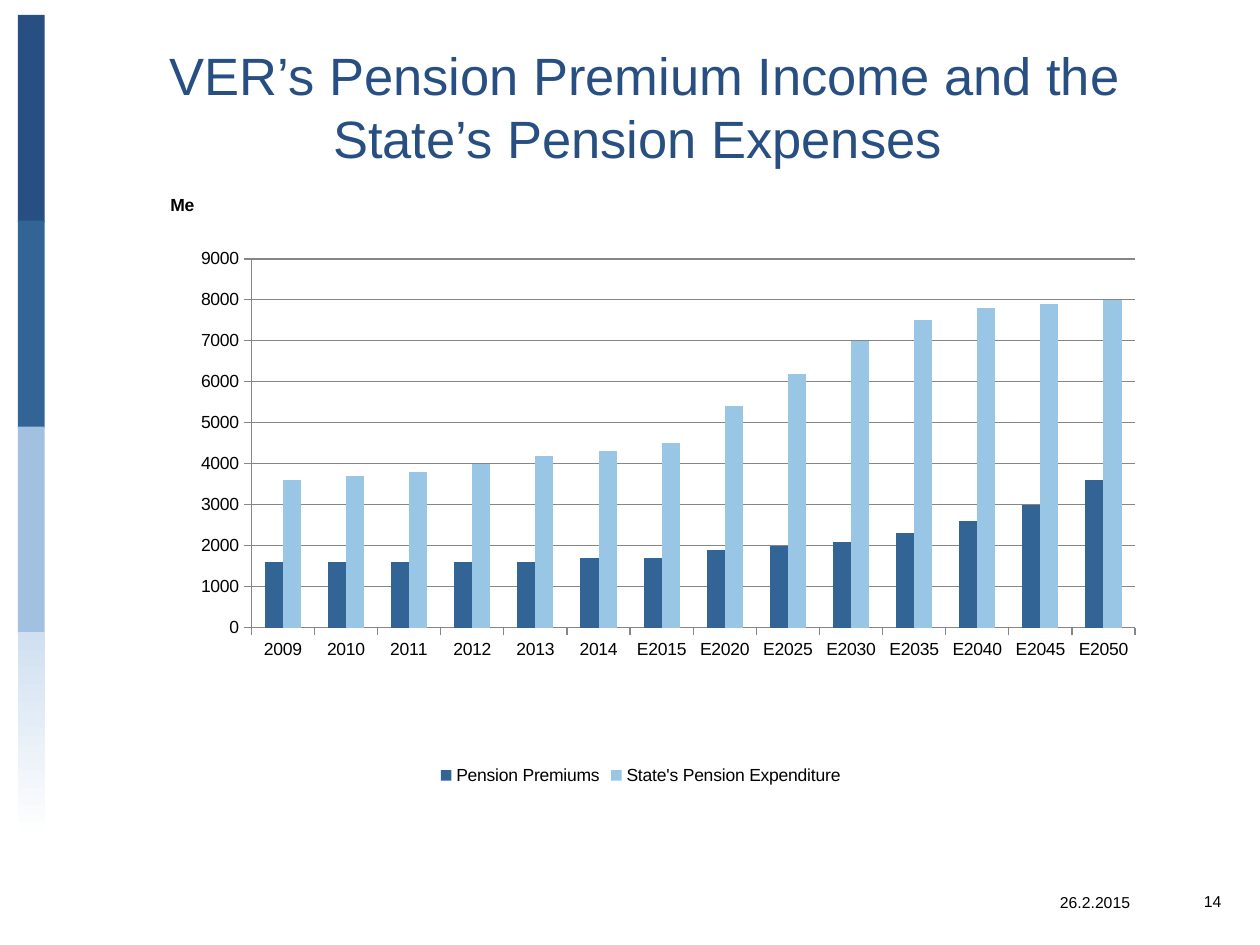
import pptx
import pptx.chart.data
import pptx.dml.color
import pptx.enum.chart
import pptx.enum.shapes
import pptx.enum.text
import pptx.oxml
import pptx.util
from pptx.util import Cm, Pt

RGBColor = pptx.dml.color.RGBColor
NAVY = RGBColor(0x27, 0x4F, 0x81)
BLUE = RGBColor(0x32, 0x64, 0x96)
SKY = RGBColor(0x99, 0xC6, 0xE4)
PALE = RGBColor(0xA2, 0xC1, 0xE0)
MIST = RGBColor(0xD0, 0xE0, 0xF0)
WHITE = RGBColor(0xFF, 0xFF, 0xFF)
GREY = RGBColor(0x86, 0x86, 0x86)
BLACK = RGBColor(0, 0, 0)
FONT = "Arial"

# Content
TITLE = "VER’s Pension Premium Income and the State’s Pension Expenses "
AXIS_UNIT = "Me"
YEARS = ["2009", "2010", "2011", "2012", "2013", "2014", "E2015",
         "E2020", "E2025", "E2030", "E2035", "E2040", "E2045", "E2050"]
SERIES = [
    ("Pension Premiums", BLUE,
     [1600, 1600, 1600, 1600, 1600, 1700, 1700,
      1900, 2000, 2100, 2300, 2600, 3000, 3600]),
    ("State's Pension Expenditure", SKY,
     [3600, 3700, 3800, 4000, 4200, 4300, 4500,
      5400, 6200, 7000, 7500, 7800, 7900, 8000]),
]
# text, left, top, width, height in cm
FOOTERS = [("14", 23.27, 17.65, 1.6, 1.02),
           ("26.2.2015", 20.62, 17.68, 2.41, 1.02)]
BAND_COLORS = [NAVY, BLUE, PALE, None]  # None fades from MIST to white


def style_font(font, size, color, bold=False):
    font.name = FONT
    font.size = Pt(size)
    font.bold = bold
    font.color.rgb = color


def write(frame, text, size, color, align):
    frame.word_wrap = True
    frame.vertical_anchor = pptx.enum.text.MSO_ANCHOR.MIDDLE
    paragraph = frame.paragraphs[0]
    paragraph.alignment = align
    run = paragraph.add_run()
    run.text = text
    style_font(run.font, size, color)


def manual_layout(**settings):
    """Chart layout element with fractions of the chart area."""
    parts = "".join(f'<c:{tag} val="{value}"/>' for tag, value in settings.items())
    return pptx.oxml.parse_xml(
        '<c:layout xmlns:c="http://schemas.openxmlformats.org/drawingml/2006/chart">'
        f"<c:manualLayout>{parts}</c:manualLayout></c:layout>")


def replace_layout(parent, layout, index):
    for old in parent.xpath("c:layout"):
        parent.remove(old)
    parent.insert(index, layout)


def add_side_bands(slide):
    for row, color in enumerate(BAND_COLORS):
        band = slide.shapes.add_shape(
            pptx.enum.shapes.MSO_SHAPE.RECTANGLE,
            Cm(0.36), Cm(0.3 + 4.15 * row), Cm(0.54), Cm(4.18))
        band.shadow.inherit = False
        band.line.fill.background()
        if color is not None:
            band.fill.solid()
            band.fill.fore_color.rgb = color
            continue
        band.fill.gradient()
        band.fill.gradient_angle = 90
        for stop, position, shade in zip(band.fill.gradient_stops, (0, 1), (WHITE, MIST)):
            stop.position = position
            stop.color.rgb = shade


def add_pension_chart(slide):
    data = pptx.chart.data.CategoryChartData(number_format="0")
    data.categories = YEARS
    for name, _, values in SERIES:
        data.add_series(name, values)
    chart = slide.shapes.add_chart(
        pptx.enum.chart.XL_CHART_TYPE.COLUMN_CLUSTERED,
        Cm(2.31), Cm(3.33), Cm(21.21), Cm(12.6), data).chart
    chart.has_title = False
    style_font(chart.font, 10, BLACK)

    # Columns
    plot = chart.plots[0]
    plot.gap_width = 150
    plot.overlap = 0
    plot.vary_by_categories = False
    for series, (_, color, _) in zip(plot.series, SERIES):
        series.format.fill.solid()
        series.format.fill.fore_color.rgb = color
        series.invert_if_negative = False

    # Axes
    values, years = chart.value_axis, chart.category_axis
    values.minimum_scale, values.maximum_scale, values.major_unit = 0, 9000, 1000
    values.has_major_gridlines = True
    for axis in (values, years):
        axis.major_tick_mark = pptx.enum.chart.XL_TICK_MARK.OUTSIDE
    for part in (values, years, values.major_gridlines):
        part.format.line.color.rgb = GREY
        part.format.line.width = Pt(0.75)

    # Unit above the value axis
    values.has_title = True
    unit_frame = values.axis_title.text_frame
    unit = unit_frame.paragraphs[0].add_run()
    unit.text = AXIS_UNIT
    style_font(unit.font, 10, BLACK, bold=True)
    body = unit_frame._txBody.bodyPr
    body.set("rot", "0")
    body.set("vert", "horz")
    replace_layout(values.axis_title._element,
                   manual_layout(xMode="edge", yMode="edge", x=0.05, y=0.04), 1)

    # Legend and plot area
    chart.has_legend = True
    chart.legend.position = pptx.enum.chart.XL_LEGEND_POSITION.BOTTOM
    chart.legend.include_in_layout = False
    style_font(chart.legend.font, 10, BLACK)
    replace_layout(chart._chartSpace.chart.plotArea,
                   manual_layout(layoutTarget="inner", xMode="edge", yMode="edge",
                                 x=0.13, y=0.15, w=0.84, h=0.59), 0)


def main():
    deck = pptx.Presentation()
    deck.slide_width, deck.slide_height = Cm(25.4), Cm(19.05)
    slide = deck.slides.add_slide(deck.slide_layouts[5])
    align = pptx.enum.text.PP_ALIGN

    add_side_bands(slide)

    # Title
    title = slide.shapes.title
    title.left, title.top, title.width, title.height = Cm(1.88), Cm(0.33), Cm(22.25), Cm(3.61)
    write(title.text_frame, TITLE, 30, NAVY, align.CENTER)

    add_pension_chart(slide)

    # Page number and date
    for text, *place in FOOTERS:
        footer = slide.shapes.add_textbox(*map(Cm, place))
        write(footer.text_frame, text, 9, BLACK, align.RIGHT)

    deck.save("out.pptx")


if __name__ == "__main__":
    main()
